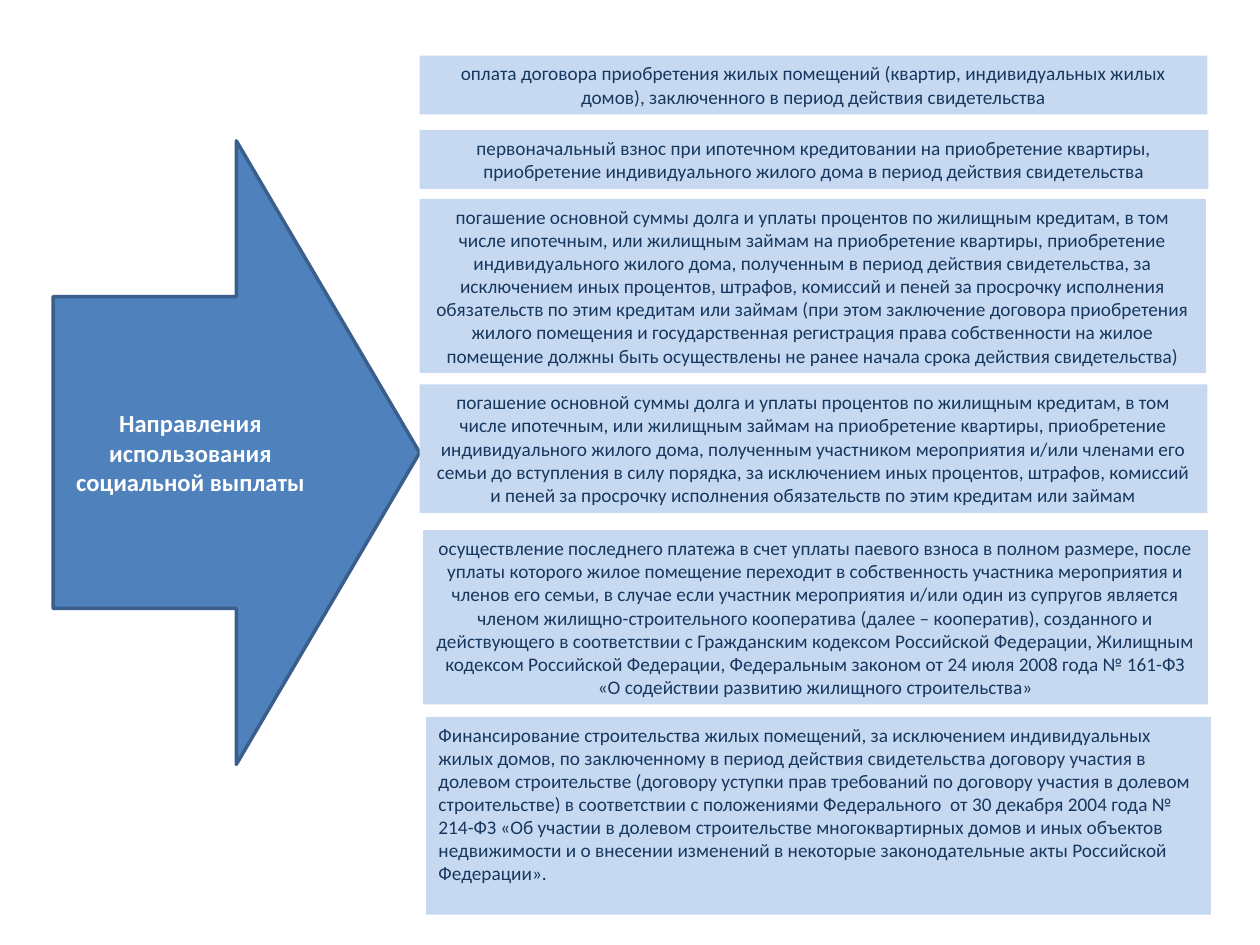
from dataclasses import dataclass

from pptx import Presentation
from pptx import util as u
from pptx.dml.color import RGBColor
from pptx.enum import shapes, text

ARROW_BLUE = RGBColor(0x4F, 0x81, 0xBD)
ARROW_EDGE = RGBColor(0x3A, 0x5F, 0x8C)
PALE_BLUE = RGBColor(0xC6, 0xD9, 0xF1)
NAVY = RGBColor(0x17, 0x37, 0x5E)
WHITE = RGBColor(0xFF, 0xFF, 0xFF)
FONT = "Calibri"


@dataclass(frozen=True)
class Frame:
    left: float
    top: float
    width: float
    height: float


@dataclass(frozen=True)
class Purpose:
    frame: Frame
    wording: str
    align: text.PP_ALIGN = text.PP_ALIGN.CENTER


LOAN_REPAYMENT = (
    "погашение основной суммы долга и уплаты процентов по жилищным кредитам, "
    "в том числе ипотечным, или жилищным займам на приобретение квартиры, "
    "приобретение индивидуального жилого дома, полученным "
)
LOAN_EXCLUSIONS = (
    "за исключением иных процентов, штрафов, комиссий и пеней за просрочку "
    "исполнения обязательств по этим кредитам или займам"
)

PURPOSES = [
    Purpose(
        Frame(8.46, 1.12, 15.88, 1.19),
        "оплата договора приобретения жилых помещений (квартир, индивидуальных "
        "жилых домов), заключенного в период действия свидетельства",
    ),
    Purpose(
        Frame(8.46, 2.62, 15.9, 1.19),
        "первоначальный взнос при ипотечном кредитовании на приобретение квартиры, "
        "приобретение индивидуального жилого дома в период действия свидетельства",
    ),
    Purpose(
        Frame(8.46, 4.01, 15.85, 3.51),
        LOAN_REPAYMENT + "в период действия свидетельства, " + LOAN_EXCLUSIONS
        + " (при этом заключение договора приобретения жилого помещения и "
        "государственная регистрация права собственности на жилое помещение "
        "должны быть осуществлены не ранее начала срока действия свидетельства)",
    ),
    Purpose(
        Frame(8.46, 7.75, 15.88, 2.59),
        LOAN_REPAYMENT + "участником мероприятия и/или членами его семьи "
        "до вступления в силу порядка, " + LOAN_EXCLUSIONS,
    ),
    Purpose(
        Frame(8.53, 10.69, 15.82, 3.51),
        "осуществление последнего платежа в счет уплаты паевого взноса в полном "
        "размере, после уплаты которого жилое помещение переходит в собственность "
        "участника мероприятия и членов его семьи, в случае если участник "
        "мероприятия и/или один из супругов является членом жилищно-строительного "
        "кооператива (далее – кооператив), созданного и действующего в соответствии "
        "с Гражданским кодексом Российской Федерации, Жилищным кодексом Российской "
        "Федерации, Федеральным законом от 24 июля 2008 года № 161-ФЗ "
        "«О содействии развитию жилищного строительства»",
    ),
    Purpose(
        Frame(8.59, 14.45, 15.82, 3.99),
        "Финансирование строительства жилых помещений, за исключением "
        "индивидуальных жилых домов, по заключенному в период действия "
        "свидетельства договору участия в долевом строительстве (договору уступки "
        "прав требований по договору участия в долевом строительстве) в "
        "соответствии с положениями Федерального  от 30 декабря 2004 года "
        "№ 214-ФЗ «Об участии в долевом строительстве многоквартирных домов и иных "
        "объектов недвижимости и о внесении изменений в некоторые законодательные "
        "акты Российской Федерации».",
        text.PP_ALIGN.LEFT,
    ),
]


def add_filled_shape(page, kind: shapes.MSO_SHAPE, frame: Frame, fill: RGBColor):
    shape = page.shapes.add_shape(
        kind, u.Cm(frame.left), u.Cm(frame.top), u.Cm(frame.width), u.Cm(frame.height)
    )
    shape.shadow.inherit = False
    shape.fill.solid()
    shape.fill.fore_color.rgb = fill
    return shape


def write(shape, wording: str, size: int, color: RGBColor, bold: bool,
          align: text.PP_ALIGN, anchor: text.MSO_ANCHOR) -> None:
    frame = shape.text_frame
    frame.word_wrap = True
    frame.vertical_anchor = anchor
    frame.text = wording
    para = frame.paragraphs[0]
    para.alignment = align
    span = para.runs[0]
    span.font.name = FONT
    span.font.size = u.Pt(size)
    span.font.bold = bold
    span.font.color.rgb = color


def add_heading_arrow(page) -> None:
    arrow = add_filled_shape(
        page, shapes.MSO_SHAPE.RIGHT_ARROW, Frame(1.07, 2.84, 7.39, 12.57), ARROW_BLUE
    )
    arrow.line.color.rgb = ARROW_EDGE
    arrow.line.width = u.Pt(2)
    write(arrow, "Направления использования социальной выплаты", 14, WHITE, True,
          text.PP_ALIGN.CENTER, text.MSO_ANCHOR.MIDDLE)


def add_purpose(page, purpose: Purpose) -> None:
    box = add_filled_shape(page, shapes.MSO_SHAPE.RECTANGLE, purpose.frame, PALE_BLUE)
    box.line.fill.background()
    write(box, purpose.wording, 11, NAVY, False, purpose.align, text.MSO_ANCHOR.TOP)


def main() -> None:
    deck = Presentation()
    deck.slide_width = u.Cm(25.4)
    deck.slide_height = u.Cm(19.05)
    page = deck.slides.add_slide(deck.slide_layouts[6])
    add_heading_arrow(page)
    for purpose in PURPOSES:
        add_purpose(page, purpose)
    deck.save("out.pptx")


if __name__ == "__main__":
    main()
